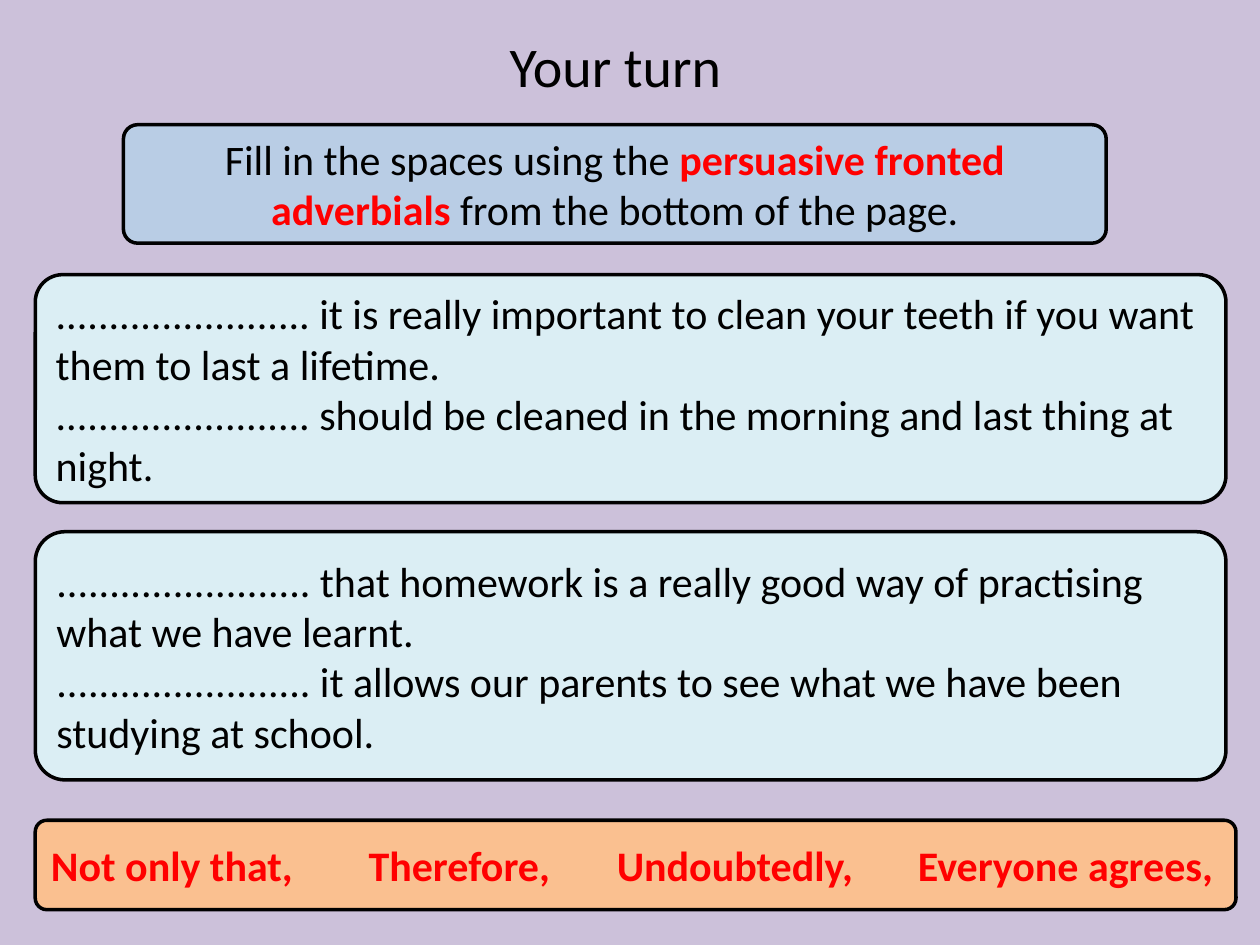
from lxml.etree import SubElement
from pptx import Presentation
from pptx.dml.color import RGBColor
from pptx.enum.shapes import MSO_SHAPE
from pptx.enum.text import MSO_ANCHOR, MSO_AUTO_SIZE, PP_ALIGN
from pptx.oxml.ns import qn
from pptx.util import Inches, Pt

BLANK = "." * 24


def color(hex_string):
    return RGBColor.from_string(hex_string)


def add_text(para, text, font="Calibri", size=24, fill="000000", bold=False):
    span = para.add_run()
    span.text = text
    span.font.name = font
    span.font.size = Pt(size)
    span.font.bold = bold
    span.font.color.rgb = color(fill)


def add_tab_stops(para, stops):
    tab_list = SubElement(para._p.get_or_add_pPr(), qn("a:tabLst"))
    for stop in stops:
        SubElement(tab_list, qn("a:tab"), pos=str(Inches(stop)), algn="l")


class Worksheet:
    ink = "000000"
    accent = "FF0000"
    line_width = 2

    def __init__(self, deck, background):
        self.page = deck.slides.add_slide(deck.slide_layouts[5])
        self.page.background.fill.solid()
        self.page.background.fill.fore_color.rgb = color(background)

    def title(self, text, left, top, width, height):
        box = self.page.shapes.title
        box.left, box.top = Inches(left), Inches(top)
        box.width, box.height = Inches(width), Inches(height)
        frame = box.text_frame
        frame.auto_size = MSO_AUTO_SIZE.NONE
        frame.vertical_anchor = MSO_ANCHOR.MIDDLE
        para = frame.paragraphs[0]
        para.alignment = PP_ALIGN.CENTER
        add_text(para, text, size=32, fill=self.ink)

    def panel(self, paragraphs, left, top, width, height, fill,
              corner=0.12, align=PP_ALIGN.LEFT, tabs=()):
        """Each paragraph is a list of (text, is_key_phrase) pairs."""
        box = self.page.shapes.add_shape(
            MSO_SHAPE.ROUNDED_RECTANGLE,
            Inches(left), Inches(top), Inches(width), Inches(height))
        box.adjustments[0] = corner
        box.shadow.inherit = False
        box.fill.solid()
        box.fill.fore_color.rgb = color(fill)
        box.line.color.rgb = color(self.ink)
        box.line.width = Pt(self.line_width)
        frame = box.text_frame
        frame.word_wrap = True
        frame.vertical_anchor = MSO_ANCHOR.MIDDLE
        for index, spans in enumerate(paragraphs):
            para = frame.add_paragraph() if index else frame.paragraphs[0]
            para.alignment = align
            if tabs:
                add_tab_stops(para, tabs)
            for text, key in spans:
                add_text(para, text, bold=key,
                         fill=self.accent if key else self.ink)

    def exercise(self, endings, top, height):
        self.panel([[(f"{BLANK} {ending}", False)] for ending in endings],
                   0.28, top, 9.45, height, "DBEEF4")


def main():
    deck = Presentation()
    deck.slide_width, deck.slide_height = Inches(10), Inches(7.5)
    sheet = Worksheet(deck, "CCC1DA")

    # Sentences to complete
    sheet.exercise([
        "it is really important to clean your teeth if you want them to last a lifetime.",
        "should be cleaned in the morning and last thing at night.",
    ], 2.18, 1.81)
    sheet.exercise([
        "that homework is a really good way of practising what we have learnt.",
        "it allows our parents to see what we have been studying at school.",
    ], 4.22, 1.97)

    # Word bank
    phrases = ["Not only that,", "Therefore,", "Undoubtedly,", "Everyone agrees,"]
    sheet.panel([[("\t".join(phrases), True)]], 0.28, 6.51, 9.53, 0.71,
                "FAC090", corner=0.13, tabs=(2.52, 4.49, 6.88))

    # Title and instruction
    sheet.title("Your turn", 1.54, 0.2, 6.69, 0.64)
    sheet.panel([[("Fill in the spaces using the ", False),
                  ("persuasive fronted adverbials", True),
                  (" from the bottom of the page.", False)]],
                0.98, 0.99, 7.8, 0.94, "B9CDE5", align=PP_ALIGN.CENTER)

    deck.save("out.pptx")


if __name__ == "__main__":
    main()
